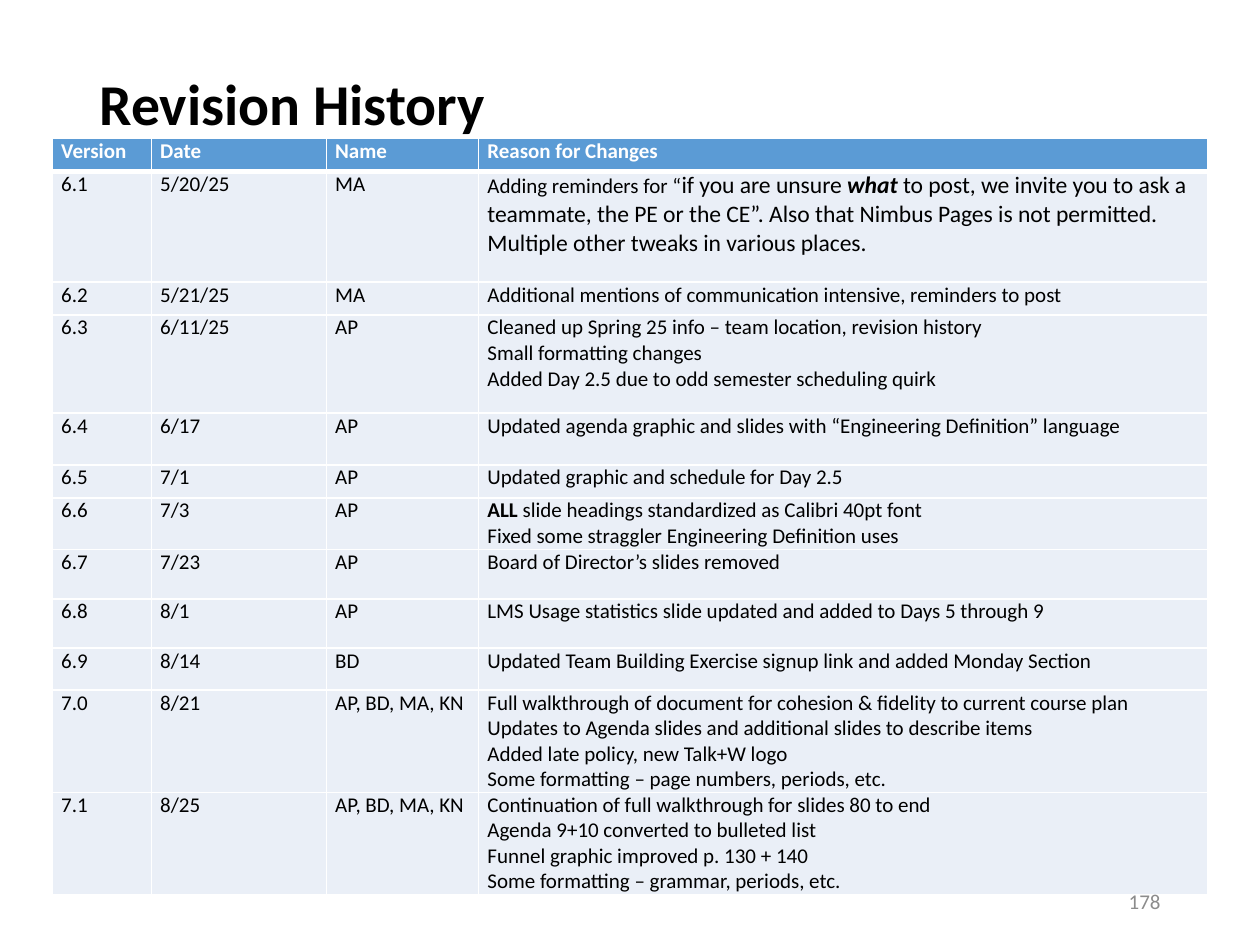
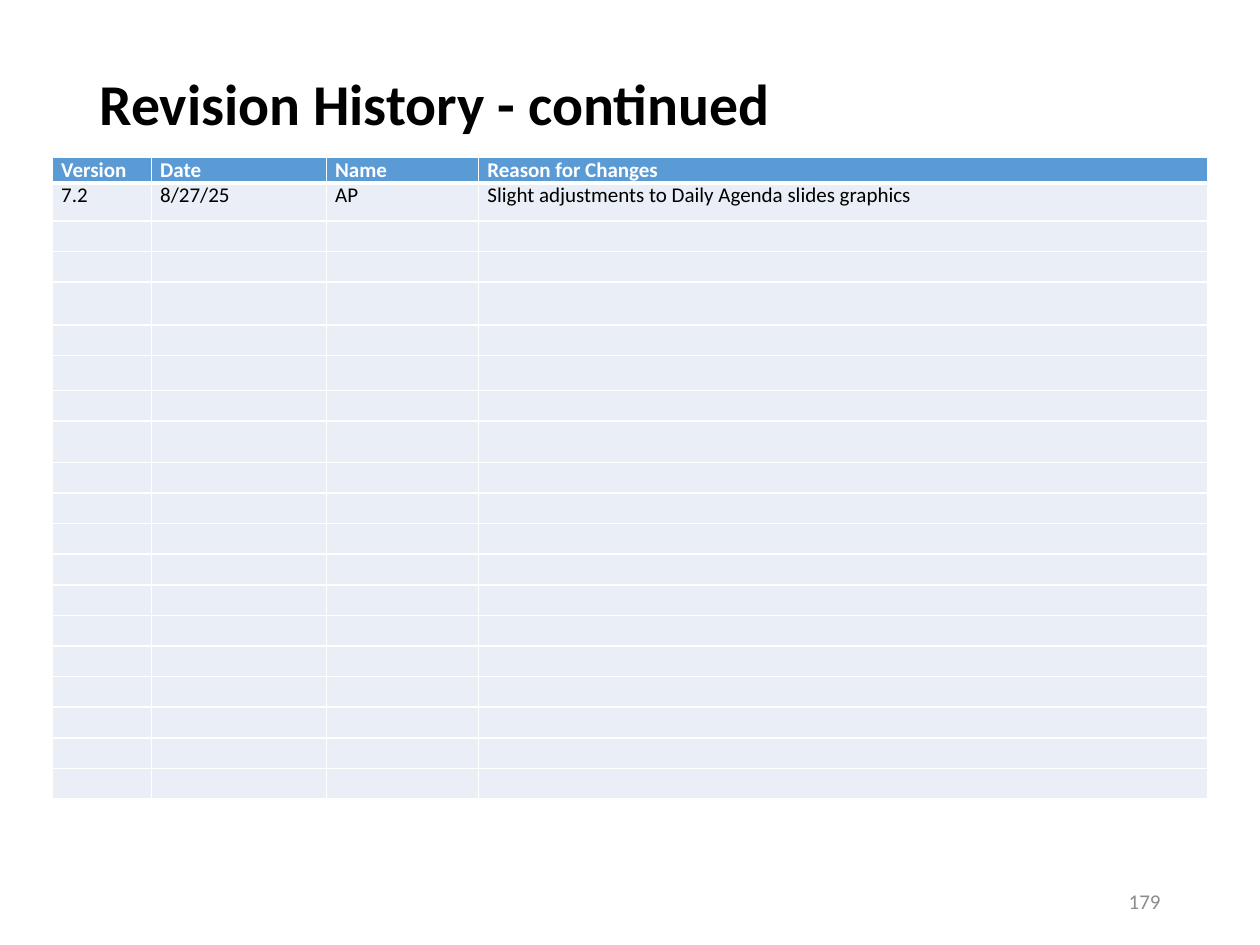
import pptx
import pptx.util
import pptx.dml.color
import pptx.enum.text
from pptx.oxml.ns import qn
from lxml import etree

Pt = pptx.util.Pt
ALIGN = pptx.enum.text.PP_ALIGN
ANCHOR = pptx.enum.text.MSO_ANCHOR

# Shared look
FONT = "Calibri"
BLACK, WHITE, GREY = "000000", "FFFFFF", "8C8C8C"
HEAD, BODY = "5B9BD5", "EAEFF7"
SIZE = 12
LEFT = 29.9
COLS = [56.6, 100, 87, 416.6]
LABELS = ["Version", "Date", "Name", "Reason for Changes"]

# Each row: height, version, date, name, then the lines of the reason.
# A line is a string or a list of (text, format) parts.
BIG = {"size": 13.5}
FIRST = [
    (63.4, "6.1", "5/20/25", "MA", [[
        ("Adding reminders for “", {}),
        ("if you are unsure ", BIG),
        ("what", {"size": 13.5, "bold": True, "italic": True}),
        (" to post, we invite you to ask a teammate, the PE or the CE”. "
         "Also that Nimbus Pages is not permitted. "
         "Multiple other tweaks in various places.", BIG)]]),
    (18.7, "6.2", "5/21/25", "MA",
     ["Additional mentions of communication intensive, reminders to post"]),
    (56.2, "6.3", "6/11/25", "AP",
     ["Cleaned up Spring 25 info – team location, revision history",
      "Small formatting changes",
      "Added Day 2.5 due to odd semester scheduling quirk"]),
    (29.5, "6.4", "6/17", "AP",
     ["Updated agenda graphic and slides with “Engineering Definition” "
      "language"]),
    (18.9, "6.5", "7/1", "AP", ["Updated graphic and schedule for Day 2.5"]),
    (29.5, "6.6", "7/3", "AP",
     [[("ALL", {"bold": True}),
       (" slide headings standardized as Calibri 40pt font", {})],
      "Fixed some straggler Engineering Definition uses"]),
    (28.3, "6.7", "7/23", "AP", ["Board of Director’s slides removed"]),
    (28.1, "6.8", "8/1", "AP",
     ["LMS Usage statistics slide updated and added to Days 5 through 9"]),
    (24, "6.9", "8/14", "BD",
     ["Updated Team Building Exercise signup link and added Monday Section"]),
    (58.4, "7.0", "8/21", "AP, BD, MA, KN",
     ["Full walkthrough of document for cohesion & fidelity to current "
      "course plan",
      "Updates to Agenda slides and additional slides to describe items",
      "Added late policy, new Talk+W logo",
      "Some formatting – page numbers, periods, etc."]),
    (58.4, "7.1", "8/25", "AP, BD, MA, KN",
     ["Continuation of full walkthrough for slides 80 to end",
      "Agenda 9+10 converted to bulleted list",
      "Funnel graphic improved p. 130 + 140",
      "Some formatting – grammar, periods, etc."]),
]

# Heights of the unused rows on the second slide
SPARE = [17.5, 17.5, 24.5, 17.5, 20, 17.5, 23.6] + [17.5] * 11
SECOND = [(21.6, "7.2", "8/27/25", "AP",
           ["Slight adjustments to Daily Agenda slides graphics"])]
SECOND += [(high, "", "", "", [""]) for high in SPARE]


def paint(code):
    return pptx.dml.color.RGBColor.from_string(code)


def write(frame, lines, size=SIZE, color=BLACK, bold=False, italic=False,
          align=ALIGN.LEFT, space=1.0):
    """Fill a text frame with lines, each one plain or made of parts."""
    for i, line in enumerate(lines):
        para = frame.paragraphs[0] if i == 0 else frame.add_paragraph()
        para.alignment = align
        para.line_spacing = space
        if not line:
            etree.SubElement(para._p, qn("a:endParaRPr"), sz=str(size * 100))
            continue
        parts = [(line, {})] if isinstance(line, str) else line
        for text, form in parts:
            run = para.add_run()
            run.text = text
            font = run.font
            font.name = FONT
            font.size = Pt(form.get("size", size))
            font.bold = form.get("bold", bold)
            font.italic = form.get("italic", italic)
            font.color.rgb = paint(color)


def label(slide, text, box, anchor, top=3.6, **form):
    """Add a text box at box = left, top, width, height."""
    frame = slide.shapes.add_textbox(*map(Pt, box)).text_frame
    frame.word_wrap = True
    frame.vertical_anchor = anchor
    frame.margin_top = Pt(top)
    write(frame, [text], **form)


def edge(cell, side, width):
    """Draw one white border of a cell."""
    line = etree.SubElement(cell._tc.get_or_add_tcPr(), qn("a:ln" + side),
                            w=str(Pt(width)))
    fill = etree.SubElement(line, qn("a:solidFill"))
    etree.SubElement(fill, qn("a:srgbClr"), val=WHITE)


def fill_cell(cell, lines, row):
    """Set borders, fill, margins and text of one cell."""
    head = row == 0
    widths = {"L": 1, "R": 1, "T": 3 if row == 1 else 1, "B": 3 if head else 1}
    for side, width in widths.items():
        edge(cell, side, width)
    cell.fill.solid()
    cell.fill.fore_color.rgb = paint(HEAD if head else BODY)
    cell.margin_left = cell.margin_right = Pt(5.1)
    cell.margin_top = cell.margin_bottom = 0
    write(cell.text_frame, lines, color=WHITE if head else BLACK, bold=head)


def grid(slide, top, high, rows):
    """Add the history table below a header row of the given height."""
    rows = [(high, *LABELS[:3], LABELS[3:])] + rows
    total = sum(row[0] for row in rows)
    table = slide.shapes.add_table(len(rows), len(COLS), Pt(LEFT), Pt(top),
                                   Pt(sum(COLS)), Pt(total)).table
    table.horz_banding = False
    for col, width in zip(table.columns, COLS):
        col.width = Pt(width)
    for r, (tall, *short, reason) in enumerate(rows):
        table.rows[r].height = Pt(tall)
        for c, lines in enumerate([[text] for text in short] + [reason]):
            fill_cell(table.cell(r, c), lines, r)


def page(deck, title, number, top, high, rows):
    """Build one slide: title, table and page number."""
    slide = deck.slides.add_slide(deck.slide_layouts[6])
    label(slide, title, (49.7, 28.8, 620.6, 104.4), ANCHOR.TOP, top=14.3,
          size=33, bold=True, space=0.9)
    grid(slide, top, high, rows)
    label(slide, number, (508.3, 500.4, 162, 28.8), ANCHOR.MIDDLE,
          color=GREY, align=ALIGN.RIGHT)


def main():
    deck = pptx.Presentation()
    deck.slide_width, deck.slide_height = Pt(720), Pt(540)
    page(deck, "Revision History", "178", 79.2, 18.7, FIRST)
    page(deck, "Revision History - continued", "179", 90, 14.6, SECOND)
    deck.save("out.pptx")


if __name__ == "__main__":
    main()
